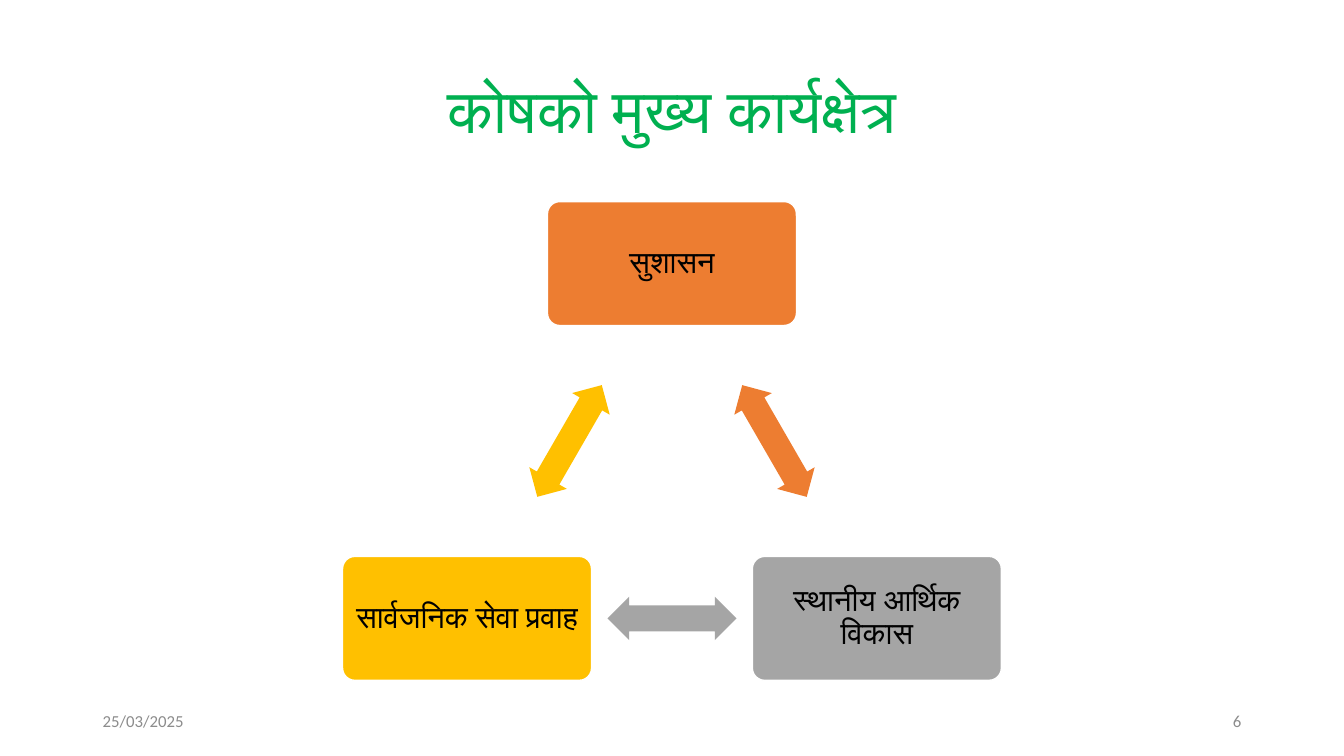
import math

import pptx
import pptx.dml.color
import pptx.enum.shapes
import pptx.enum.text
import pptx.util

WIDTH, HEIGHT = 13.33, 7.5
MARGIN = 0.92
AREAS = [
    ("सुशासन", "ED7D31"),
    ("स्थानीय आर्थिक विकास", "A5A5A5"),
    ("सार्वजनिक सेवा प्रवाह", "FFC000"),
]
ALIGN = pptx.enum.text.PP_ALIGN
SHAPE = pptx.enum.shapes.MSO_SHAPE


def color(value):
    """Turn a hex string into a colour."""
    return pptx.dml.color.RGBColor.from_string(value)


def write(shape, text, size, font, ink, align, inset=0.1, spacing=1.0):
    """Write one middle-anchored paragraph into a shape."""
    frame = shape.text_frame
    frame.word_wrap = True
    frame.vertical_anchor = pptx.enum.text.MSO_ANCHOR.MIDDLE
    frame.margin_left = frame.margin_right = pptx.util.Inches(inset)
    frame.margin_top = frame.margin_bottom = pptx.util.Inches(inset / 2)
    paragraph = frame.paragraphs[0]
    paragraph.text = text
    paragraph.alignment = align
    paragraph.line_spacing = spacing
    paragraph.font.size = pptx.util.Pt(size)
    paragraph.font.name = font
    paragraph.font.color.rgb = color(ink)


def add_text(slide, box, *style, **options):
    """Add a text box at left, top, width, height in inches."""
    shape = slide.shapes.add_textbox(*map(pptx.util.Inches, box))
    write(shape, *style, **options)


def add_centred(slide, kind, centre, size, fill, adjustments):
    """Add a filled preset shape around a centre point."""
    (x, y), (width, height) = centre, size
    box = (x - width / 2, y - height / 2, width, height)
    shape = slide.shapes.add_shape(kind, *map(pptx.util.Inches, box))
    shape.shadow.inherit = False
    shape.fill.solid()
    shape.fill.fore_color.rgb = color(fill)
    for index, value in enumerate(adjustments):
        shape.adjustments[index] = value
    return shape


def add_title(slide, box):
    """Add the slide title."""
    add_text(slide, box, "कोषको मुख्य कार्यक्षेत्र", 44, "Lato", "00B050",
             ALIGN.CENTER, spacing=0.9)


def add_cycle(slide, box):
    """Place the areas on a triangle in the box, with arrows between them."""
    left, top, width, height = box
    card = (2.47, 1.23)
    radius = (height - card[1]) / 1.5
    step = 360 / len(AREAS)
    centres = []
    for index in range(len(AREAS)):
        angle = math.radians(index * step - 90)
        centres.append((left + width / 2 + radius * math.cos(angle),
                        top + card[1] / 2 + radius * (1 + math.sin(angle))))
    for index, (label, fill) in enumerate(AREAS):
        start, end = centres[index], centres[(index + 1) % len(AREAS)]
        area = add_centred(slide, SHAPE.ROUNDED_RECTANGLE, start, card, fill, [0.1])
        area.line.color.rgb = color("FFFFFF")
        area.line.width = pptx.util.Pt(1)
        write(area, label, 22, "Lato", "000000", ALIGN.CENTER, inset=0.09, spacing=0.9)
        middle = ((start[0] + end[0]) / 2, (start[1] + end[1]) / 2)
        arrow = add_centred(slide, SHAPE.LEFT_RIGHT_ARROW, middle, (1.28, 0.43),
                            fill, [0.6, 0.5])
        arrow.line.fill.background()
        arrow.rotation = step * (index + 0.5)


def add_footer(slide, box):
    """Add the date at the left and the slide number at the right."""
    left, top, width, height = box
    part = 3
    entries = [(left, "25/03/2025", ALIGN.LEFT),
               (left + width - part, "6", ALIGN.RIGHT)]
    for x, text, align in entries:
        add_text(slide, (x, top, part, height), text, 12, "Calibri", "8C8C8C", align)


def main():
    """Build and save the slide."""
    presentation = pptx.Presentation()
    presentation.slide_width = pptx.util.Inches(WIDTH)
    presentation.slide_height = pptx.util.Inches(HEIGHT)
    slide = presentation.slides.add_slide(presentation.slide_layouts[6])
    content = WIDTH - 2 * MARGIN
    add_title(slide, (MARGIN, 0.4, content, 1.45))
    add_cycle(slide, (MARGIN, 2, content, 4.75))
    add_footer(slide, (MARGIN, 6.95, content, 0.4))
    presentation.save("out.pptx")


if __name__ == "__main__":
    main()
